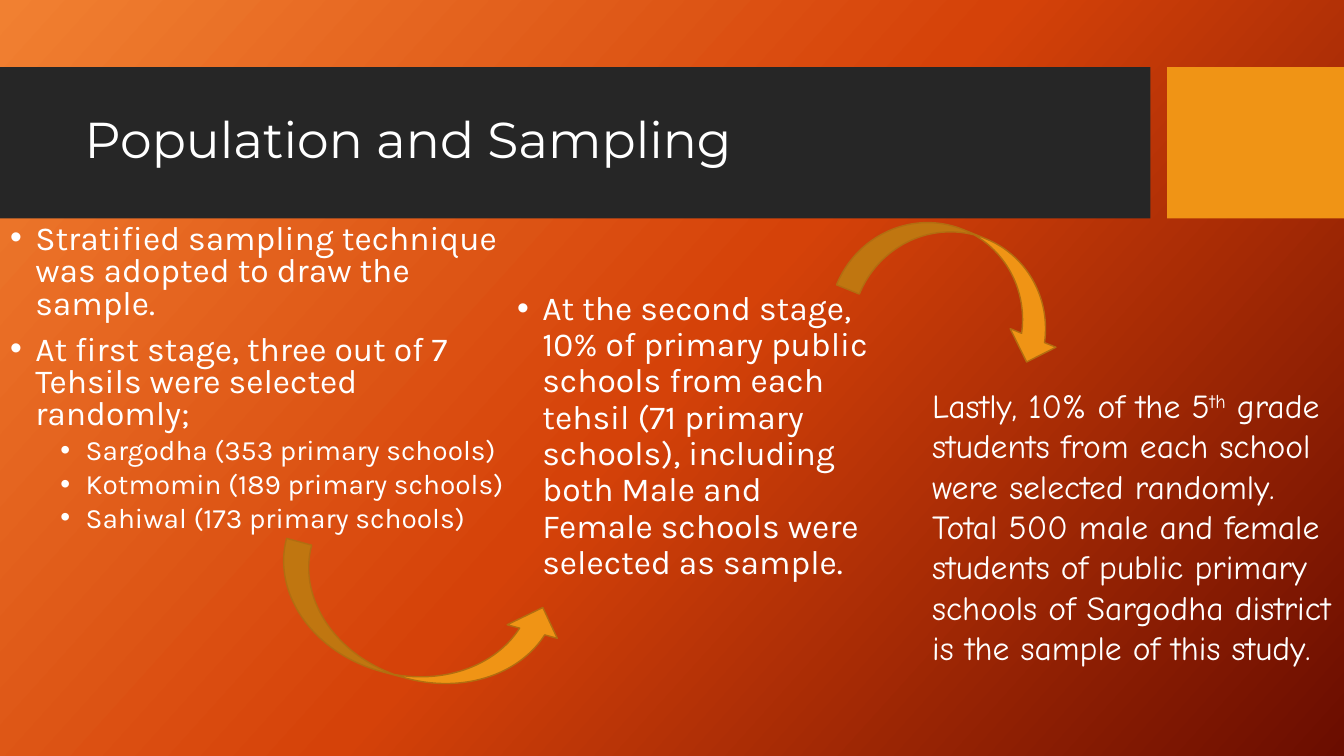
from copy import deepcopy

from lxml import etree
from pptx import Presentation
from pptx.dml.color import RGBColor
from pptx.enum import shapes, text
from pptx.oxml.ns import qn
from pptx.util import Pt

THEME = {
    "white": "FFFFFF", "bar": "262626", "accent": "F09415", "outline": "B26D10",
    "gradient": [(0, "F18031"), (0.5, "D54209"), (1, "6A0D00")], "angle": 42,
    "title": ("Montserrat", 36), "body": ("Karla", 24),
    "sub": ("Karla", 20), "closing": ("Comic Neue", 24),
}
TITLE = "Population and Sampling"
TITLE_BOX = (53.3, 59, 756.7, 85)
STAGES = [
    ((0, 157, 370, 229), 0.8, [
        (0, "Stratified sampling technique was adopted to draw the sample."),
        (0, "At first stage, three out of 7 Tehsils were selected randomly;"),
        (1, "Sargodha (353 primary schools)"),
        (1, "Kotmomin (189 primary schools)"),
        (1, "Sahiwal (173 primary schools)"),
    ]),
    ((362.2, 204.5, 268.6, 219), 0.9, [
        (0, "At the second stage, 10% of primary public schools from each tehsil "
            "(71 primary schools), including both Male and Female schools were "
            "selected as sample."),
    ]),
]
CLOSING_BOX = (658.8, 271.4, 301.2, 269)
CLOSING = [
    ("Lastly, 10% of the 5", False),
    ("th", True),
    (" grade students from each school were selected randomly. Total 500 male and "
     "female students of public primary schools of Sargodha district is the sample "
     "of this study.", False),
]
BARS = [((0, 48, 821.7, 108), "bar"), ((833.7, 48, 126.3, 108), "accent")]
ARROWS = [
    (shapes.MSO_SHAPE.CURVED_UP_ARROW, (191.5, 410.4, 208.1, 74.2), 15.1),
    (shapes.MSO_SHAPE.CURVED_DOWN_ARROW, (604.8, 166.3, 164.2, 70.6), 22.1),
]


def color(name):
    return RGBColor.from_string(THEME.get(name, name))


def place(sp, box):
    sp.left, sp.top, sp.width, sp.height = map(Pt, box)


def style(p, role):
    for r in p.runs:
        r.font.name = THEME[role][0]
        r.font.size = Pt(THEME[role][1])
        r.font.color.rgb = color("white")


def add_filled(s, kind, box, fill):
    sp = s.shapes.add_shape(kind, *map(Pt, box))
    sp.shadow.inherit = False
    sp.fill.solid()
    sp.fill.fore_color.rgb = color(fill)
    sp.line.fill.background()
    return sp


def paint_background(s):
    fill = s.background.fill
    fill.gradient()
    fill.gradient_angle = 360 - THEME["angle"]
    stop_list = next(s._element.iter(qn("a:gsLst")))
    while len(stop_list) < len(THEME["gradient"]):
        stop_list.append(deepcopy(stop_list[0]))
    for stop, (position, rgb) in zip(fill.gradient_stops, THEME["gradient"]):
        stop.position = position
        stop.color.rgb = color(rgb)


def add_bullet(p, level):
    pPr = p._p.get_or_add_pPr()
    pPr.set("marL", str(Pt(18 + 36 * level)))
    pPr.set("indent", str(Pt(-18)))
    etree.SubElement(pPr, qn("a:buFont")).set("typeface", "Arial")
    etree.SubElement(pPr, qn("a:buChar")).set("char", "•")


def fill_stage(sp, box, spacing, items):
    place(sp, box)
    tf = sp.text_frame
    tf.auto_size = text.MSO_AUTO_SIZE.NONE
    for i, (level, words) in enumerate(items):
        p = tf.add_paragraph() if i else tf.paragraphs[0]
        p.text = words
        p.level = level
        add_bullet(p, level)
        p.line_spacing = spacing
        p.space_before = Pt((5 if level else 10) if i else 0)
        style(p, "sub" if level else "body")


def main():
    prs = Presentation()
    prs.slide_width, prs.slide_height = Pt(960), Pt(540)
    s = prs.slides.add_slide(prs.slide_layouts[3])
    paint_background(s)

    for i, (box, fill) in enumerate(BARS):
        sp = add_filled(s, shapes.MSO_SHAPE.RECTANGLE, box, fill)
        s.shapes._spTree.insert(2 + i, sp._element)

    title = s.shapes.title
    place(title, TITLE_BOX)
    tf = title.text_frame
    tf.text = TITLE
    tf.auto_size = text.MSO_AUTO_SIZE.NONE
    tf.vertical_anchor = text.MSO_ANCHOR.MIDDLE
    p = tf.paragraphs[0]
    p.alignment = text.PP_ALIGN.LEFT
    p.line_spacing = 0.9
    style(p, "title")

    for idx, stage in enumerate(STAGES, 1):
        fill_stage(s.placeholders[idx], *stage)

    tf = s.shapes.add_textbox(*map(Pt, CLOSING_BOX)).text_frame
    tf.word_wrap = True
    p = tf.paragraphs[0]
    for words, raised in CLOSING:
        r = p.add_run()
        r.text = words
        if raised:
            r._r.get_or_add_rPr().set("baseline", "30000")
    style(p, "closing")

    for kind, box, rotation in ARROWS:
        sp = add_filled(s, kind, box, "accent")
        sp.rotation = rotation
        sp.line.color.rgb = color("outline")
        sp.line.width = Pt(1)

    prs.save("out.pptx")


if __name__ == "__main__":
    main()
